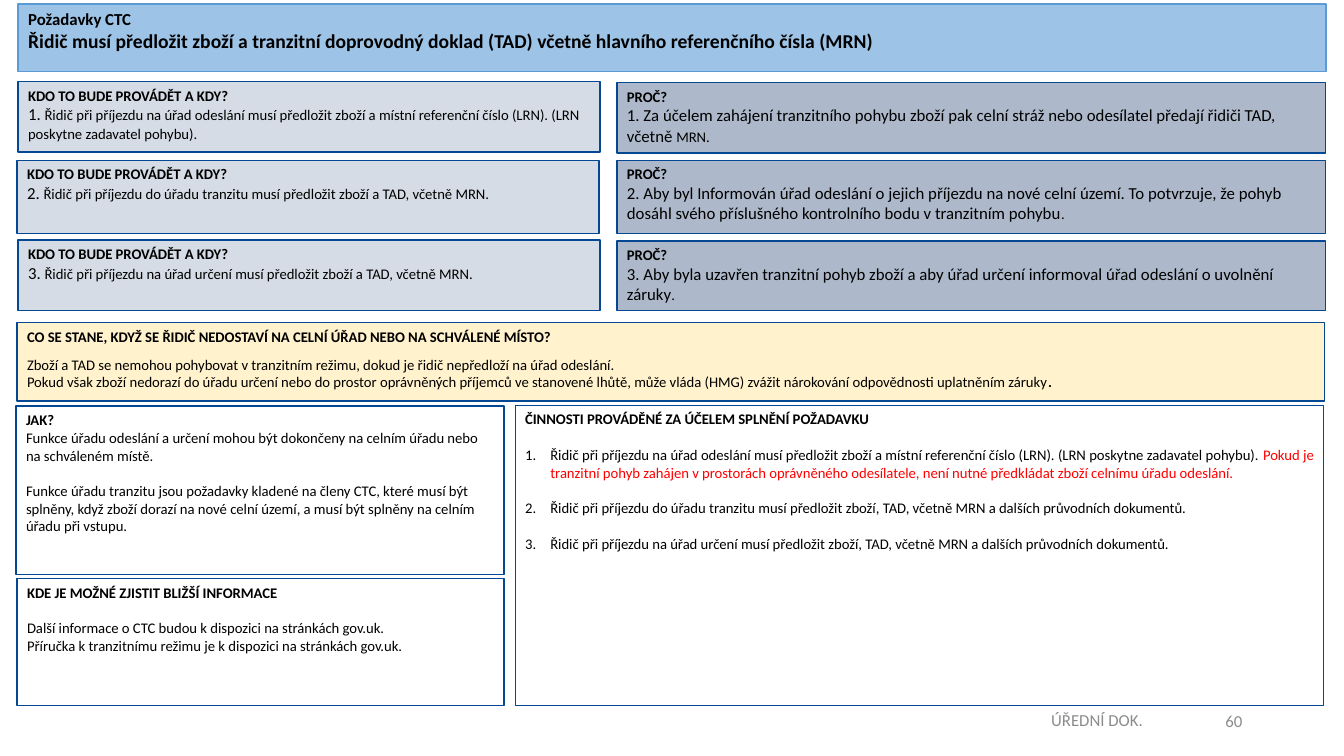
from lxml import etree
from pptx import Presentation, util as u
from pptx.dml.color import RGBColor
from pptx.enum import shapes, text
from pptx.oxml.ns import qn

PX = u.Inches(1) // 100  # 100 px to the inch
NAVY, BLACK, RED, GREY = "044894", "000000", "FF0000", "8C8C8C"
LEFT, MID = text.PP_ALIGN.LEFT, text.PP_ALIGN.CENTER
RIGHT, JUST = text.PP_ALIGN.RIGHT, text.PP_ALIGN.JUSTIFY
BLANK = 12.8  # height of one line of 10.5 pt text, in points

deck = Presentation()
deck.slide_width, deck.slide_height = 1333 * PX, 750 * PX
slide = deck.slides.add_slide(deck.slide_layouts[5])


def write(frame, rows, align=LEFT):
    """Each row is the space before it, then runs of text, size, bold, colour."""
    frame.word_wrap = True
    frame.auto_size = text.MSO_AUTO_SIZE.NONE
    for i, (gap, *runs) in enumerate(rows):
        para = frame.paragraphs[0] if i == 0 else frame.add_paragraph()
        para.alignment = align
        para.space_before = u.Pt(gap)
        for words, size, bold, color in runs:
            run = para.add_run()
            run.text = words
            run.font.name = "Calibri"
            run.font.size = u.Pt(size)
            run.font.bold = bold
            run.font.color.rgb = RGBColor.from_string(color)


def panel(box, fill, rows, line=NAVY, shape=None):
    if shape is None:
        shape = slide.shapes.add_shape(shapes.MSO_SHAPE.RECTANGLE, 0, 0, 0, 0)
        shape.shadow.inherit = False
    shape.left, shape.top, shape.width, shape.height = [n * PX for n in box]
    shape.fill.solid()
    shape.fill.fore_color.rgb = RGBColor.from_string(fill)
    shape.line.color.rgb = RGBColor.from_string(line)
    shape.line.width = u.Pt(1)
    shape.text_frame.vertical_anchor = text.MSO_ANCHOR.TOP
    write(shape.text_frame, rows)
    return shape


# Title band
panel((18, 4, 1297, 67), "9DC3E6", [
    (0, ("Požadavky CTC", 12, True, BLACK)),
    (0, ("Řidič musí předložit zboží a tranzitní doprovodný doklad (TAD) "
         "včetně hlavního referenčního čísla (MRN)", 14, True, BLACK)),
], "5B9BD5", slide.shapes.title)

# Who and when, beside why
steps = [
    ((18, 81, 577, 70), (612, 82, 703, 70),
     "Řidič při příjezdu na úřad odeslání musí předložit zboží a místní "
     "referenční číslo (LRN). (LRN poskytne zadavatel pohybu).",
     "Za účelem zahájení tranzitního pohybu zboží pak celní stráž nebo "
     "odesílatel předají řidiči TAD, včetně ", "MRN."),
    ((17, 159, 577, 73), (612, 159, 703, 73),
     "Řidič při příjezdu do úřadu tranzitu musí předložit zboží a TAD, včetně MRN.",
     "Aby byl Informován úřad odeslání o jejich příjezdu na nové celní území. "
     "To potvrzuje, že pohyb dosáhl svého příslušného kontrolního bodu "
     "v tranzitním pohybu", "."),
    ((18, 238, 577, 70), (612, 239, 703, 69),
     "Řidič při příjezdu na úřad určení musí předložit zboží a TAD, včetně MRN.",
     "Aby byla uzavřen tranzitní pohyb zboží a aby úřad určení informoval "
     "úřad odeslání o uvolnění záruky", "."),
]
for num, (who, why, task, cause, end) in enumerate(steps, 1):
    panel(who, "D6DCE5", [
        (0, ("KDO TO BUDE PROVÁDĚT A KDY?", 10.5, True, BLACK)),
        (0, (f"{num}. ", 12, False, BLACK), (task, 10.5, False, BLACK)),
    ])
    panel(why, "ADB9CA", [
        (0, ("PROČ?", 10.5, True, BLACK)),
        (0, (f"{num}. {cause}", 12, False, BLACK), (end, 10.5, False, BLACK)),
    ])

# What happens if the driver does not come
panel((17, 320, 1297, 78), "FFF2CC", [
    (0, ("CO SE STANE, KDYŽ SE ŘIDIČ NEDOSTAVÍ NA CELNÍ ÚŘAD "
         "NEBO NA SCHVÁLENÉ MÍSTO?", 10.5, True, BLACK)),
    (7.3, ("Zboží a TAD se nemohou pohybovat v tranzitním režimu, dokud je "
           "řidič nepředloží na úřad odeslání.", 10.5, False, BLACK)),
    (0, ("Pokud však zboží nedorazí do úřadu určení nebo do prostor oprávněných "
         "příjemců ve stanovené lhůtě, může vláda (HMG) zvážit nárokování "
         "odpovědnosti uplatněním záruky", 10.5, False, BLACK),
     (".", 10.5, True, BLACK)),
])

# How
panel((16, 403, 484, 167), "FFFFFF", [
    (0, ("JAK?", 10.5, True, BLACK)),
    (0, ("Funkce úřadu odeslání a určení mohou být dokončeny na celním úřadu "
         "nebo na schváleném místě.", 10.5, False, BLACK)),
    (BLANK, ("Funkce úřadu tranzitu jsou požadavky kladené na členy CTC, které "
             "musí být splněny, když zboží dorazí na nové celní území, a musí "
             "být splněny na celním úřadu při vstupu.", 10.5, False, BLACK)),
])

# Where to learn more
panel((17, 574, 483, 126), "FFFFFF", [
    (0, ("KDE JE MOŽNÉ ZJISTIT BLIŽŠÍ INFORMACE", 10.5, True, BLACK)),
    (BLANK, ("Další informace o CTC budou k dispozici na stránkách gov.uk.",
             10.5, False, BLACK)),
    (0, ("Příručka k tranzitnímu režimu je k dispozici na stránkách gov.uk.",
         10.5, False, BLACK)),
])

# Numbered actions
acts = panel((511, 402, 802, 298), "FFFFFF", [
    (0, ("ČINNOSTI PROVÁDĚNÉ ZA ÚČELEM SPLNĚNÍ POŽADAVKU", 10.5, True, BLACK)),
    (BLANK, ("Řidič při příjezdu na úřad odeslání musí předložit zboží a místní "
             "referenční číslo (LRN). (LRN poskytne zadavatel pohybu). ",
             10.5, False, BLACK),
     ("Pokud je tranzitní pohyb zahájen v prostorách oprávněného odesílatele, "
      "není nutné předkládat zboží celnímu úřadu odeslání.", 10.5, False, RED)),
    (BLANK, ("Řidič při příjezdu do úřadu tranzitu musí předložit zboží, TAD, "
             "včetně MRN a dalších průvodních dokumentů.", 10.5, False, BLACK)),
    (BLANK, ("Řidič při příjezdu na úřad určení musí předložit zboží, TAD, "
             "včetně MRN a dalších průvodních dokumentů.", 10.5, False, BLACK)),
])
for para in acts.text_frame.paragraphs[1:]:
    para.alignment = JUST
    props = para._p.get_or_add_pPr()
    props.set("marL", str(25 * PX))
    props.set("indent", str(-25 * PX))
    etree.SubElement(props, qn("a:buAutoNum"), type="arabicPeriod")

# Footer and page number
for box, words, align in [
    ((865, 694, 450, 40), "ÚŘEDNÍ DOK. ", MID),
    ((1193, 695, 49, 40), "60", RIGHT),
]:
    foot = slide.shapes.add_textbox(*[n * PX for n in box]).text_frame
    foot.vertical_anchor = text.MSO_ANCHOR.MIDDLE
    write(foot, [(0, (words, 12, False, GREY))], align)

deck.save("out.pptx")
